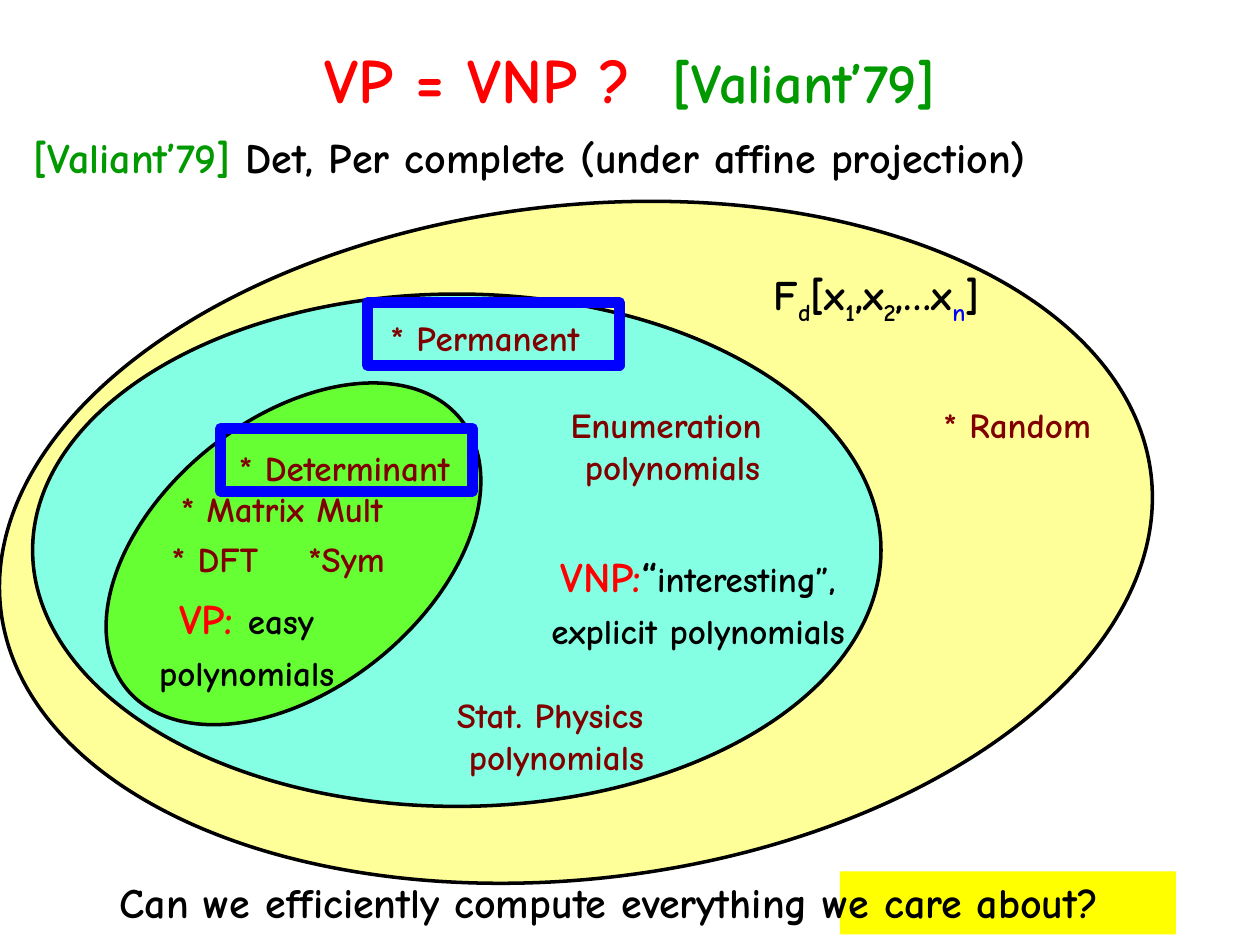
"""Build the slide on the VP and VNP classes of polynomials."""
from lxml.etree import SubElement
from pptx import Presentation
from pptx.dml.color import RGBColor
from pptx.enum.shapes import MSO_SHAPE
from pptx.enum.text import MSO_ANCHOR, PP_ALIGN
from pptx.oxml.ns import qn
from pptx.util import Inches, Pt

FONT = "Comic Neue"
RED, GREEN, BLACK, BROWN, BLUE = "FF0000", "009900", "000000", "800000", "0000FF"
COLS, ROWS = 120, 90
SUB = {"baseline": "-25000"}
GAP = {"spc": "1100"}

TITLE = ((9, 0, 102, 15), [[("VP = VNP ?", 36, RED), (" ", 36, RED, GAP),
                            ("[Valiant’79]", 32, GREEN)]])
BAND = ((80, 83, 32, 6), 0, "FFFF00", 100)
SETS = [
    ((22.8, -3.5, 64.1, 110.3), 83.3, "FFFF99", 100),
    ((19.1, 12, 48.8, 80.8), 90, "58FFFF", 73),
    ((15.1, 32.3, 25.7, 40.9), 51.1, "66FF33", 100),
]
FRAMES = [(35, 28.8, 24, 6), (21, 40.8, 24, 6)]
NOTES = [
    ((11, 55.8, 25, 13), [[("VP: ", 24, RED), ("easy", 20, BLACK)],
                          [("polynomials", 20, BLACK)]]),
    ((49, 51.8, 35, 14), [[("VNP:", 24, RED), ("“", 24, BLACK),
                           ("interesting”,", 20, BLACK)],
                          [("explicit polynomials", 20, BLACK)]]),
    ((68, 25, 31, 13), [[("F", 24, BLACK), ("d", 24, BLACK, SUB),
                         ("[x", 24, BLACK), ("1", 24, BLACK, SUB),
                         (",x", 24, BLACK), ("2", 24, BLACK, SUB),
                         (",…x", 24, BLACK), ("n", 24, BLUE, SUB),
                         ("]", 24, BLACK)]]),
]
LABELS = [
    ((20, 41.9, 25.6, 5.3), ["* Determinant"]),
    ((35, 29.6, 22.4, 5.3), ["* Permanent"]),
    ((88, 37.8, 17.8, 5.3), ["* Random"]),
    ((14.2, 45.8, 25.3, 5.3), ["* Matrix Mult"]),
    ((53, 37.8, 22.1, 9.2), ["Enumeration ", "polynomials"]),
    ((40.9, 65.5, 24.2, 9.2), ["Stat. Physics ", "polynomials"]),
]
PAIR = ((15.2, 50.6, 24, 5.3), [[("* DFT\t*Sym", 20, BROWN)]])
STOP = 13
CLAIM = ((2, 11.9, 110, 6.1), [[
    ("[Valiant’79] ", 24, GREEN),
    ("Det, Per complete (under affine projection)", 24, BLACK)]])
QUERY = ((3, 82.9, 110, 6.1), [[
    ("Can we efficiently compute everything we care about?", 24, BLACK)]])

deck = Presentation()
deck.slide_width, deck.slide_height = Inches(10), Inches(7.5)
slide = deck.slides.add_slide(deck.slide_layouts[5])
shapes = slide.shapes


def place(box):
    """Turn grid units into slide lengths."""
    units = (deck.slide_width / COLS, deck.slide_height / ROWS) * 2
    return [round(part * unit) for part, unit in zip(box, units)]


def tint(hue):
    """Turn a hex string into a colour."""
    return RGBColor.from_string(hue)


def draw(kind, box, turn=0, fill=None, alpha=100, line=None, width=2):
    """Add one preset shape."""
    shape = shapes.add_shape(kind, *place(box))
    shape.shadow.inherit = False
    shape.rotation = turn
    if fill:
        shape.fill.solid()
        shape.fill.fore_color.rgb = tint(fill)
        if alpha < 100:
            hue = shape._element.spPr.find(".//" + qn("a:srgbClr"))
            SubElement(hue, qn("a:alpha"), val=str(alpha * 1000))
    else:
        shape.fill.background()
    if line:
        shape.line.color.rgb = tint(line)
        shape.line.width = Pt(width)
    else:
        shape.line.fill.background()


def write(frame, paras, align=PP_ALIGN.CENTER, before=0, wrap=True):
    """Fill a text frame with styled runs."""
    frame.word_wrap = wrap
    for num, runs in enumerate(paras):
        para = frame.add_paragraph() if num else frame.paragraphs[0]
        para.alignment = align
        para.space_before = Pt(before)
        for text, size, hue, *extra in runs:
            run = para.add_run()
            run.text = text
            font = run.font
            font.name, font.size, font.bold = FONT, Pt(size), True
            font.color.rgb = tint(hue)
            for attrs in extra:
                for key, val in attrs.items():
                    run._r.get_or_add_rPr().set(key, val)


def note(box, paras, **style):
    """Add one text box."""
    frame = shapes.add_textbox(*place(box)).text_frame
    write(frame, paras, **style)
    return frame


def main():
    """Lay out the slide and save it."""
    head = shapes.title
    head.left, head.top, head.width, head.height = place(TITLE[0])
    head.text_frame.vertical_anchor = MSO_ANCHOR.MIDDLE
    write(head.text_frame, TITLE[1])
    draw(MSO_SHAPE.RECTANGLE, *BAND)
    for item in SETS:
        draw(MSO_SHAPE.OVAL, *item, line=BLACK)
    for box, paras in NOTES:
        note(box, paras, before=5)
    for box, lines in LABELS:
        note(box, [[(text, 20, BROWN)] for text in lines], wrap=False)
    pair = note(*PAIR, align=PP_ALIGN.LEFT)
    tabs = SubElement(pair.paragraphs[0]._p.get_or_add_pPr(), qn("a:tabLst"))
    SubElement(tabs, qn("a:tab"), pos=str(place((STOP, 0))[0]), algn="l")
    for box in FRAMES:
        draw(MSO_SHAPE.RECTANGLE, box, line=BLUE, width=6)
    note(*QUERY)
    note(*CLAIM, align=PP_ALIGN.LEFT)
    deck.save("out.pptx")


if __name__ == "__main__":
    main()
